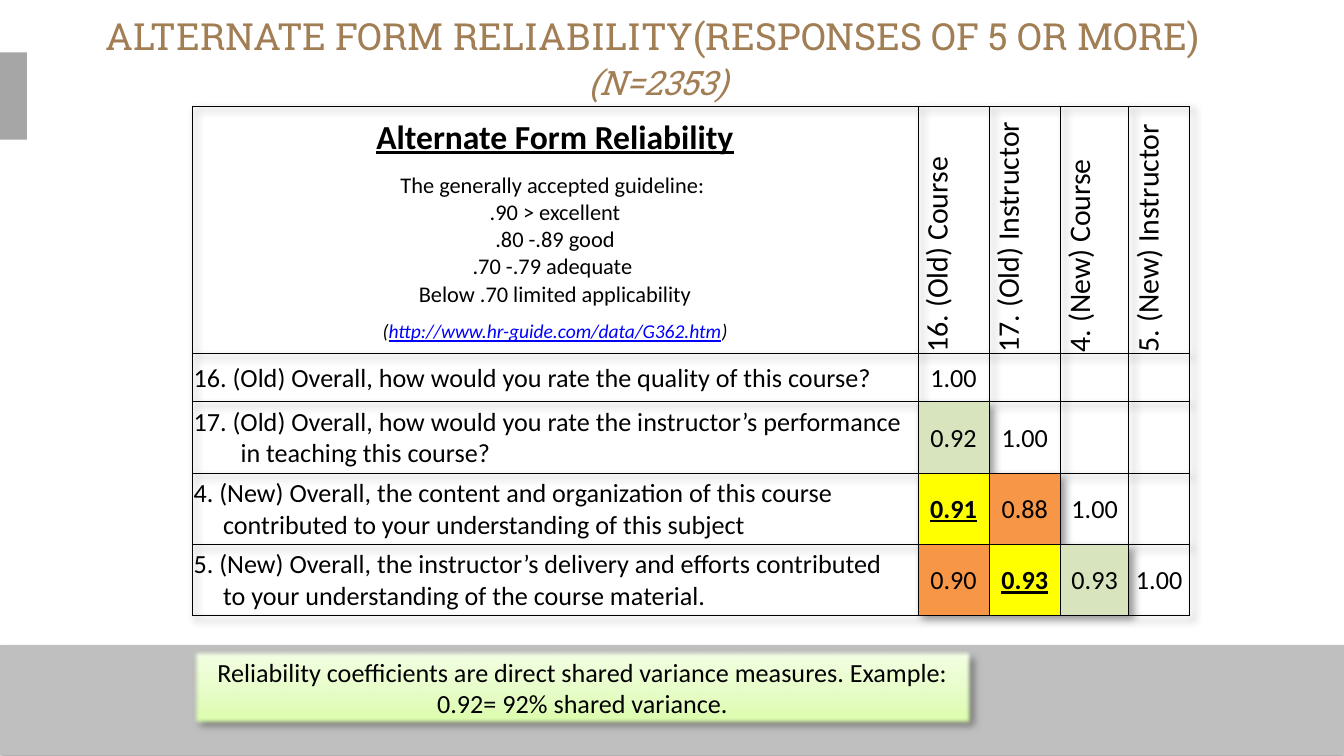
from lxml import etree
from pptx import Presentation
from pptx.dml.color import RGBColor
from pptx.enum import shapes, text
from pptx.oxml.ns import qn
from pptx.util import Inches, Pt

BLACK = RGBColor(0x00, 0x00, 0x00)
TAN = RGBColor(0xA2, 0x7E, 0x55)
BLUE = RGBColor(0x00, 0x00, 0xFF)
SILVER = RGBColor(0xBF, 0xBF, 0xBF)
GRAY = RGBColor(0xA6, 0xA6, 0xA6)
GREEN = RGBColor(0xD7, 0xE4, 0xBD)
YELLOW = RGBColor(0xFF, 0xFF, 0x00)
ORANGE = RGBColor(0xF7, 0x96, 0x46)
OLIVE = RGBColor(0x98, 0xB9, 0x55)
LIME_STOPS = [
    (0, RGBColor(0xDA, 0xFD, 0xA7)),
    (35, RGBColor(0xE4, 0xFC, 0xC2)),
    (100, RGBColor(0xF5, 0xFF, 0xE7)),
]

COLUMNS = [5.4, 0.53, 0.53, 0.51, 0.45]
ROWS = [1.84, 0.36, 0.53, 0.53, 0.53]
HEADINGS = ["16. (Old) Course", "17. (Old) Instructor", "4. (New) Course", "5. (New) Instructor"]
GUIDELINE = [
    "The generally accepted guideline: ",
    ".90 > excellent",
    ".80 -.89 good",
    ".70 -.79 adequate ",
    "Below .70 limited applicability",
]
# Each question: its lines, the indent of the second line, its coefficients
QUESTIONS = [
    (["16. (Old) Overall, how would you rate the quality of this course?"], 0, ["1.00"]),
    (["17. (Old) Overall, how would you rate the instructor’s performance",
      "in teaching this course?"], 0.35, ["0.92", "1.00"]),
    (["4. (New) Overall, the content and organization of this course",
      "contributed to your understanding of this subject"], 0.22, ["0.91", "0.88", "1.00"]),
    (["5. (New) Overall, the instructor’s delivery and efforts contributed",
      "to your understanding of the course material."], 0.22, ["0.90", "0.93", "0.93", "1.00"]),
]
# Fill by table row and column
FILLS = {(2, 1): GREEN, (3, 1): YELLOW, (3, 2): ORANGE,
         (4, 1): ORANGE, (4, 2): YELLOW, (4, 3): GREEN}


def add_span(para, words, size, color=BLACK, name="Calibri", bold=False, italic=False, underline=False):
    span = para.add_run()
    span.text = words
    font = span.font
    font.name, font.size, font.color.rgb = name, Pt(size), color
    font.bold, font.italic, font.underline = bold, italic, underline


def add_para(frame, align=text.PP_ALIGN.CENTER):
    """Return the empty first paragraph, or a new one after the others."""
    para = frame.paragraphs[0]
    if para.runs:
        para = frame.add_paragraph()
    para.alignment = align
    return para


def add_color(parent, color):
    return etree.SubElement(parent, qn("a:srgbClr"), val=str(color))


def add_rectangle(page, left, top, width, height, color=None):
    box = page.shapes.add_shape(shapes.MSO_SHAPE.RECTANGLE, Inches(left), Inches(top),
                                Inches(width), Inches(height))
    box.shadow.inherit = False
    box.line.fill.background()
    if color is not None:
        box.fill.solid()
        box.fill.fore_color.rgb = color
    return box


def add_shadow(effects, opacity, blur, distance, angle):
    shadow = etree.SubElement(effects, qn("a:outerShdw"), blurRad=str(Pt(blur)), dist=str(Pt(distance)),
                              dir=str(angle * 60000), rotWithShape="0")
    etree.SubElement(add_color(shadow, BLACK), qn("a:alpha"), val=str(opacity * 1000))


def find_effects(box):
    return box._element.spPr.find(qn("a:effectLst"))


def set_gradient(box, stops):
    """Fill from the bottom up."""
    box.fill.gradient()
    box.fill.gradient_angle = 90
    stop_list = box._element.spPr.find(qn("a:gradFill")).find(qn("a:gsLst"))
    for stop in list(stop_list):
        stop_list.remove(stop)
    for position, color in stops:
        add_color(etree.SubElement(stop_list, qn("a:gs"), pos=str(position * 1000)), color)


def add_title(page):
    box = page.shapes.add_textbox(Inches(0.36), Inches(0.1), Inches(9), Inches(0.63))
    frame = box.text_frame
    frame.word_wrap = True
    frame.margin_left = frame.margin_right = frame.margin_top = frame.margin_bottom = 0
    para = add_para(frame)
    add_span(para, "ALTERNATE FORM RELIABILITY(RESPONSES OF 5 OR MORE)", 20, TAN, "Roboto Slab")
    para.add_line_break()
    add_span(para, " ", 20, TAN, "Roboto Slab")
    add_span(para, "(N=2353)", 18, TAN, "Roboto Slab", italic=True)


def style_cell(cell, color):
    cell.vertical_anchor = text.MSO_ANCHOR.MIDDLE
    cell.margin_left = cell.margin_right = cell.margin_top = Inches(0.01)
    cell.margin_bottom = 0
    properties = cell._tc.get_or_add_tcPr()
    for side in ("a:lnL", "a:lnR", "a:lnT", "a:lnB"):
        border = etree.SubElement(properties, qn(side), w=str(Pt(0.5)))
        add_color(etree.SubElement(border, qn("a:solidFill")), BLACK)
    if color is None:
        cell.fill.background()
    else:
        cell.fill.solid()
        cell.fill.fore_color.rgb = color


def fill_guideline(frame):
    add_span(add_para(frame), "Alternate Form Reliability", 18, bold=True, underline=True)
    for index, line in enumerate(GUIDELINE):
        para = add_para(frame)
        if index == 0:
            para.line_spacing = 1.5
        add_span(para, line, 12)
    source = add_para(frame)
    source.line_spacing = 1.5
    add_span(source, "(", 10.5, italic=True)
    add_span(source, "http://www.hr-guide.com/data/G362.htm", 10.5, BLUE, italic=True, underline=True)
    add_span(source, ")", 10.5, italic=True)


def fill_question(frame, lines, indent):
    for index, line in enumerate(lines):
        para = add_para(frame, text.PP_ALIGN.LEFT)
        if index:
            para._p.get_or_add_pPr().set("marL", str(Inches(indent)))
        add_span(para, line, 14)


def add_reliability_table(page):
    table = page.shapes.add_table(len(ROWS), len(COLUMNS), Inches(1.43), Inches(0.79),
                                  Inches(sum(COLUMNS)), Inches(sum(ROWS))).table
    table.first_row = table.horz_banding = False
    effects = etree.Element(qn("a:effectLst"))
    table._tbl.tblPr.insert(0, effects)
    add_shadow(effects, 40, 4, 3, 45)
    for column, width in zip(table.columns, COLUMNS):
        column.width = Inches(width)
    for row, height in zip(table.rows, ROWS):
        row.height = Inches(height)
    for row in range(len(ROWS)):
        for column in range(len(COLUMNS)):
            style_cell(table.cell(row, column), FILLS.get((row, column)))

    fill_guideline(table.cell(0, 0).text_frame)
    for column, heading in enumerate(HEADINGS, 1):
        cell = table.cell(0, column)
        cell._tc.tcPr.set("vert", "vert270")
        add_span(add_para(cell.text_frame, text.PP_ALIGN.LEFT), heading, 16)
    for row, (lines, indent, values) in enumerate(QUESTIONS, 1):
        fill_question(table.cell(row, 0).text_frame, lines, indent)
        for column, value in enumerate(values, 1):
            key = FILLS.get((row, column)) == YELLOW
            add_span(add_para(table.cell(row, column).text_frame), value, 14, bold=key, underline=key)


def add_callout(page):
    box = add_rectangle(page, 1.43, 4.83, 5.81, 0.57)
    set_gradient(box, LIME_STOPS)
    box.line.color.rgb = OLIVE
    box.line.width = Pt(0.75)
    effects = find_effects(box)
    add_shadow(effects, 40, 4, 3, 45)
    etree.SubElement(effects, qn("a:softEdge"), rad=str(Pt(2.5)))
    frame = box.text_frame
    frame.word_wrap = True
    frame.vertical_anchor = text.MSO_ANCHOR.MIDDLE
    add_span(add_para(frame), "Reliability coefficients are direct shared variance measures. "
             "Example: 0.92= 92% shared variance.", 14)


def main():
    deck = Presentation()
    deck.slide_width = Inches(10)
    deck.slide_height = deck.slide_width * 9 // 16
    page = deck.slides.add_slide(deck.slide_layouts[6])
    footer = add_rectangle(page, 0, 4.8, 10, 0.82, SILVER)
    add_shadow(find_effects(footer), 35, 3.1, 1.8, 90)
    add_rectangle(page, -0.03, 0.39, 0.23, 0.65, GRAY)
    add_title(page)
    add_reliability_table(page)
    add_callout(page)
    deck.save("out.pptx")


if __name__ == "__main__":
    main()
